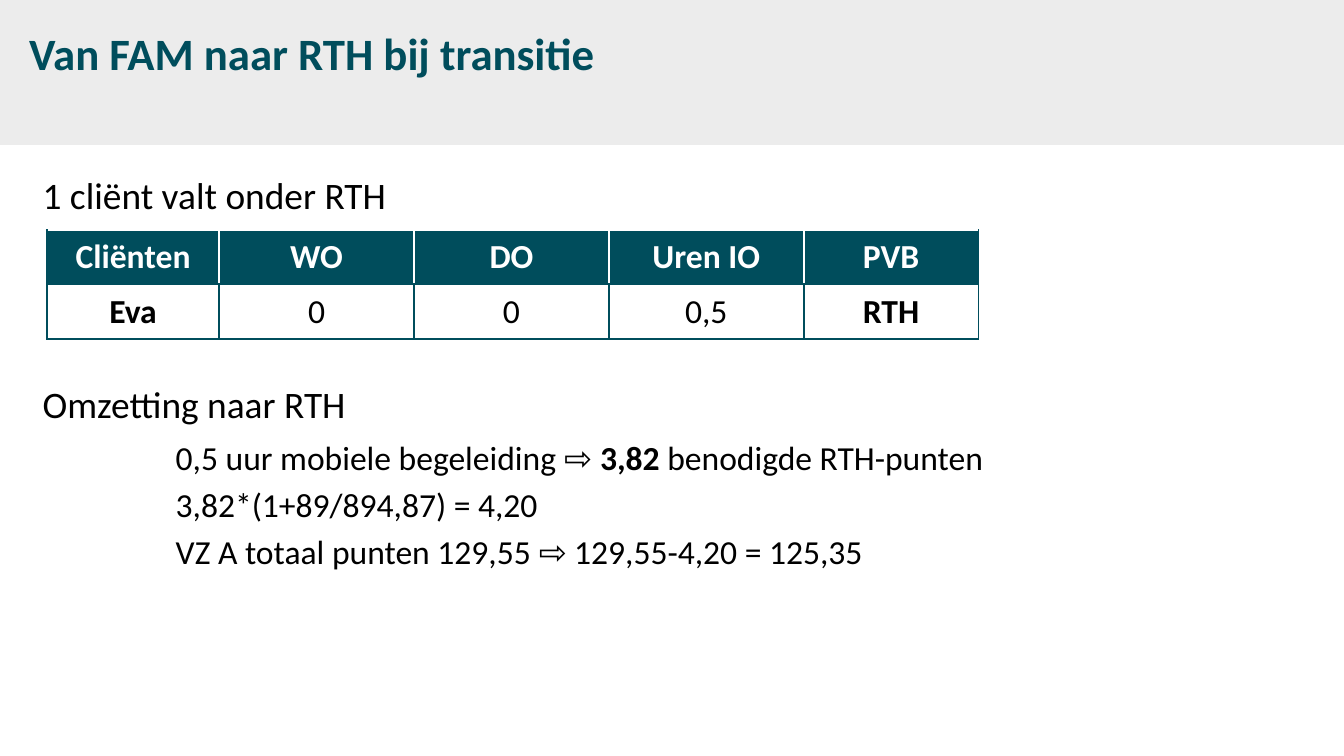
import pptx
import pptx.dml.color
import pptx.enum.shapes
import pptx.enum.text
import pptx.oxml
import pptx.oxml.ns
import pptx.util
from lxml import etree

Pt = pptx.util.Pt
RGBColor = pptx.dml.color.RGBColor
TEAL = RGBColor(0x00, 0x4D, 0x5C)
GREY = RGBColor(0xEC, 0xEC, 0xEC)
WHITE = RGBColor(0xFF, 0xFF, 0xFF)
BLACK = RGBColor(0x00, 0x00, 0x00)
FONT = "Calibri"

HEADINGS = ["Cliënten", "WO", "DO", "Uren IO", "PVB"]
CLIENT = ["Eva", "0", "0", "0,5", "RTH"]
COLUMN_WIDTHS = [92.2, 104.4, 104.4, 104.4, 93.6]
CONVERSION = [
    ["0,5 uur mobiele begeleiding ⇨ ", "3,82", " benodigde RTH-punten"],
    ["3,82*(1+89/894,87) = 4,20"],
    ["VZ A totaal punten 129,55 ⇨ 129,55-4,20 = 125,35"],
]


def style_font(font, size, color, bold=None):
    """Set the face, size, colour and weight of a font."""
    font.name = FONT
    font.size = Pt(size)
    font.color.rgb = color
    font.bold = bold


def add_text_frame(page, left, top, width, height):
    """Add a wrapping text box and return its frame."""
    frame = page.shapes.add_textbox(Pt(left), Pt(top), Pt(width), Pt(height)).text_frame
    frame.word_wrap = True
    return frame


def fill_paragraph(para, parts, size, indent, space=0):
    """Write parts into a paragraph, with every second part bold."""
    para._p.get_or_add_pPr().set("marL", str(Pt(indent)))
    para.space_before = Pt(space)
    style_font(para.font, size, BLACK)
    for index, part in enumerate(parts):
        span = para.add_run()
        span.text = part
        if index % 2:
            span.font.bold = True


def set_border(cell, position, side, color):
    """Insert a one-point border line at a position in the cell properties."""
    line = pptx.oxml.parse_xml(
        f'<a:ln{side} {pptx.oxml.ns.nsdecls("a")} w="{Pt(1)}"/>')
    fill = etree.SubElement(line, pptx.oxml.ns.qn("a:solidFill"))
    etree.SubElement(fill, pptx.oxml.ns.qn("a:srgbClr"), val=str(color))
    cell._tc.get_or_add_tcPr().insert(position, line)


def add_header(page, left, top, width, height):
    """Place the grey band and the title on it."""
    band = page.shapes.add_shape(
        pptx.enum.shapes.MSO_SHAPE.RECTANGLE, Pt(left), Pt(top), Pt(width), Pt(height))
    band.shadow.inherit = False
    band.fill.solid()
    band.fill.fore_color.rgb = GREY
    band.line.fill.background()
    para = add_text_frame(page, left + 8.6, top + 11.4, width - 28, 57).paragraphs[0]
    para.text = "Van FAM naar RTH bij transitie"
    style_font(para.font, 24, TEAL, True)


def add_intro(page, left, top, width, height):
    """Place the line above the table."""
    frame = add_text_frame(page, left, top, width, height)
    fill_paragraph(frame.paragraphs[0], ["1 cliënt valt onder RTH"], 20, 7.2)


def add_client_table(page, left, top, width, height):
    """Place the client table with its teal heading row."""
    rows = [HEADINGS, CLIENT]
    table = page.shapes.add_table(
        len(rows), len(HEADINGS), Pt(left), Pt(top), Pt(width), Pt(height)).table
    table.horz_banding = False
    for column, column_width in zip(table.columns, COLUMN_WIDTHS):
        column.width = Pt(column_width)
    last = len(HEADINGS) - 1
    for row, texts in enumerate(rows):
        heading = row == 0
        inner = WHITE if heading else TEAL
        for column, text in enumerate(texts):
            cell = table.cell(row, column)
            if heading:
                cell.fill.solid()
                cell.fill.fore_color.rgb = TEAL
            else:
                cell.fill.background()
            edges = {
                "L": TEAL if column == 0 else inner,
                "R": TEAL if column == last else inner,
                "T": WHITE if heading else TEAL,
                "B": TEAL,
            }
            for position, (side, color) in enumerate(edges.items()):
                set_border(cell, position, side, color)
            para = cell.text_frame.paragraphs[0]
            para.text = text
            para.alignment = pptx.enum.text.PP_ALIGN.CENTER
            style_font(para.font, 18, WHITE if heading else BLACK,
                       heading or column in (0, last))


def add_conversion(page, left, top, width, height):
    """Place the conversion heading and its indented calculation."""
    frame = add_text_frame(page, left, top, width, height)
    fill_paragraph(frame.paragraphs[0], ["Omzetting naar RTH"], 20, 7.2)
    for index, parts in enumerate(CONVERSION):
        fill_paragraph(frame.add_paragraph(), parts, 18, 78.5, 3.6 if index else 6)


def main():
    """Build the slide and save it."""
    deck = pptx.Presentation()
    deck.slide_width = Pt(720)
    deck.slide_height = Pt(405)
    page = deck.slides.add_slide(deck.slide_layouts[6])
    add_header(page, 0, -1.4, 720, 79)
    add_intro(page, 8.6, 88.6, 692, 32)
    add_client_table(page, 25.2, 123.1, sum(COLUMN_WIDTHS), 58.4)
    add_conversion(page, 8.6, 200.6, 692, 155)
    deck.save("out.pptx")


if __name__ == "__main__":
    main()
